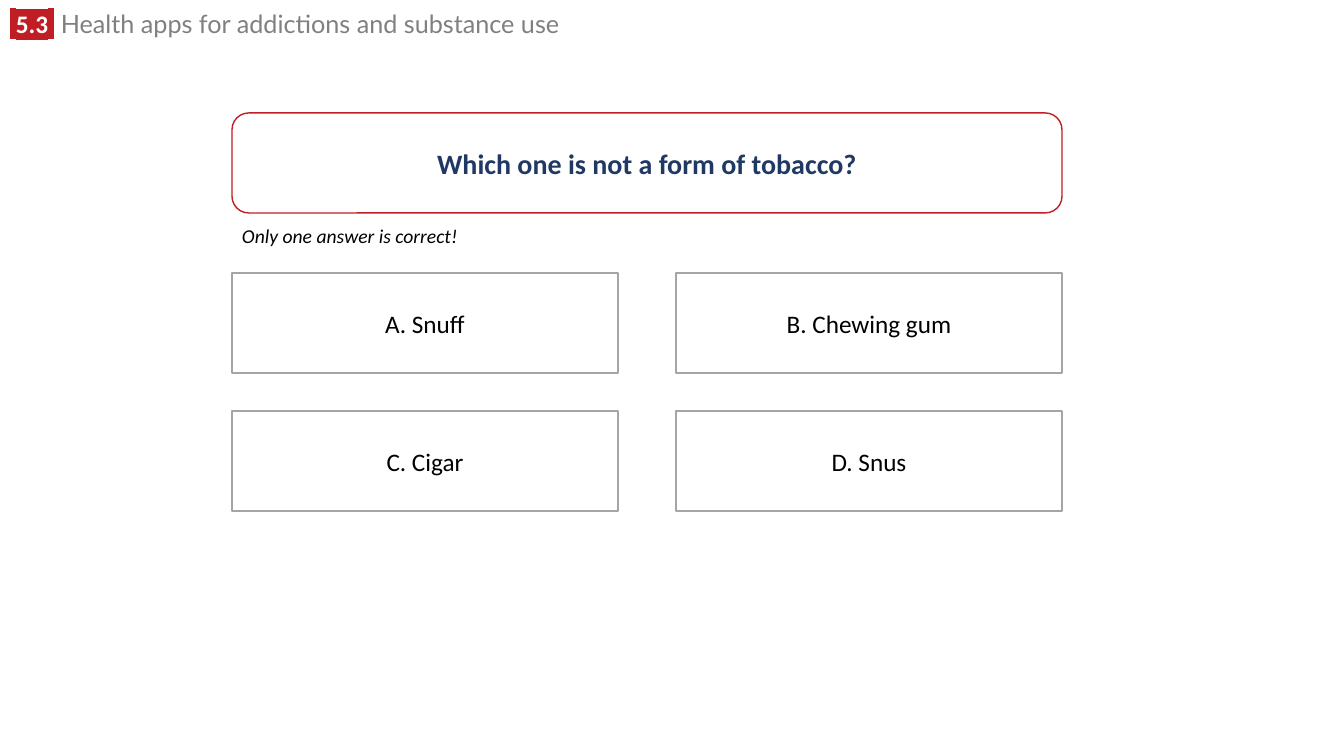
"""Builds a quiz slide with one question and four answer boxes."""
from lxml.etree import SubElement
from pptx import Presentation
from pptx.dml.color import RGBColor
from pptx.enum.shapes import MSO_SHAPE
from pptx.enum.text import MSO_ANCHOR, PP_ALIGN
from pptx.oxml.ns import qn
from pptx.util import Pt

RED, GREY = "C01E24", "A5A5A5"
HEADING = [
    (" ", "Lato", "FFFFFF", True, RED),
    ("5.3", "Calibri", "FFFFFF", True, RED),
    (" ", "Lato", "FFFFFF", True, RED),
    (" Health apps for addictions and substance use", "Lato", "808080", False, None),
]
QUESTION = "Which one is not a form of tobacco?"
HINT = "Only one answer is correct!"
ANSWERS = ["A. Snuff", "B. Chewing gum", "C. Cigar", "D. Snus"]

LEFT, WIDTH, BOX_HEIGHT = 232, 830, 100
QUESTION_TOP, HINT_TOP, ANSWERS_TOP = 113, 219, 273
ANSWER_WIDTH, ROW_STEP, COLUMNS = 386, 138, 2
COLUMN_STEP = WIDTH - ANSWER_WIDTH


def px(length):
    return round(length * 914400 / 100.8)


def color(value):
    return RGBColor.from_string(value)


def style(font, size, tone, name="Calibri", bold=False, italic=False):
    font.size, font.name = Pt(size), name
    font.bold, font.italic = bold, italic
    font.color.rgb = color(tone)


def add_text(page, left, top, width, height, wrap):
    box = page.shapes.add_textbox(px(left), px(top), px(width), px(height))
    box.text_frame.word_wrap = wrap
    return box.text_frame.paragraphs[0]


def highlight(span, tone):
    fill = span.font._element.find(qn("a:solidFill"))
    mark = SubElement(span.font._element, qn("a:highlight"))
    SubElement(mark, qn("a:srgbClr"), val=tone)
    fill.addnext(mark)


def add_box(page, kind, left, top, width, line, text, size, tone, bold=False):
    box = page.shapes.add_shape(kind, px(left), px(top), px(width), px(BOX_HEIGHT))
    box.shadow.inherit = False
    box.fill.solid()
    box.fill.fore_color.rgb = color("FFFFFF")
    box.line.color.rgb = color(line)
    box.line.width = Pt(1)
    box.text_frame.word_wrap = True
    box.text_frame.vertical_anchor = MSO_ANCHOR.MIDDLE
    para = box.text_frame.paragraphs[0]
    para.text = text
    para.alignment = PP_ALIGN.CENTER
    style(para.font, size, tone, bold=bold)


def main():
    deck = Presentation()
    deck.slide_width, deck.slide_height = px(1344), px(756)
    page = deck.slides.add_slide(deck.slide_layouts[6])

    para = add_text(page, 0, 9, 960, 35, True)
    para.line_spacing = 0.8
    for text, name, tone, bold, mark in HEADING:
        span = para.add_run()
        span.text = text
        style(span.font, 18, tone, name, bold)
        if mark:
            highlight(span, mark)

    add_box(page, MSO_SHAPE.ROUNDED_RECTANGLE, LEFT, QUESTION_TOP, WIDTH,
            RED, QUESTION, 20, "203864", bold=True)

    para = add_text(page, LEFT, HINT_TOP, 238, 34, False)
    para.text = HINT
    style(para.font, 14, "000000", italic=True)

    for index, answer in enumerate(ANSWERS):
        row, column = divmod(index, COLUMNS)
        add_box(page, MSO_SHAPE.RECTANGLE, LEFT + column * COLUMN_STEP,
                ANSWERS_TOP + row * ROW_STEP, ANSWER_WIDTH, GREY, answer, 18, "000000")

    deck.save("out.pptx")


if __name__ == "__main__":
    main()
